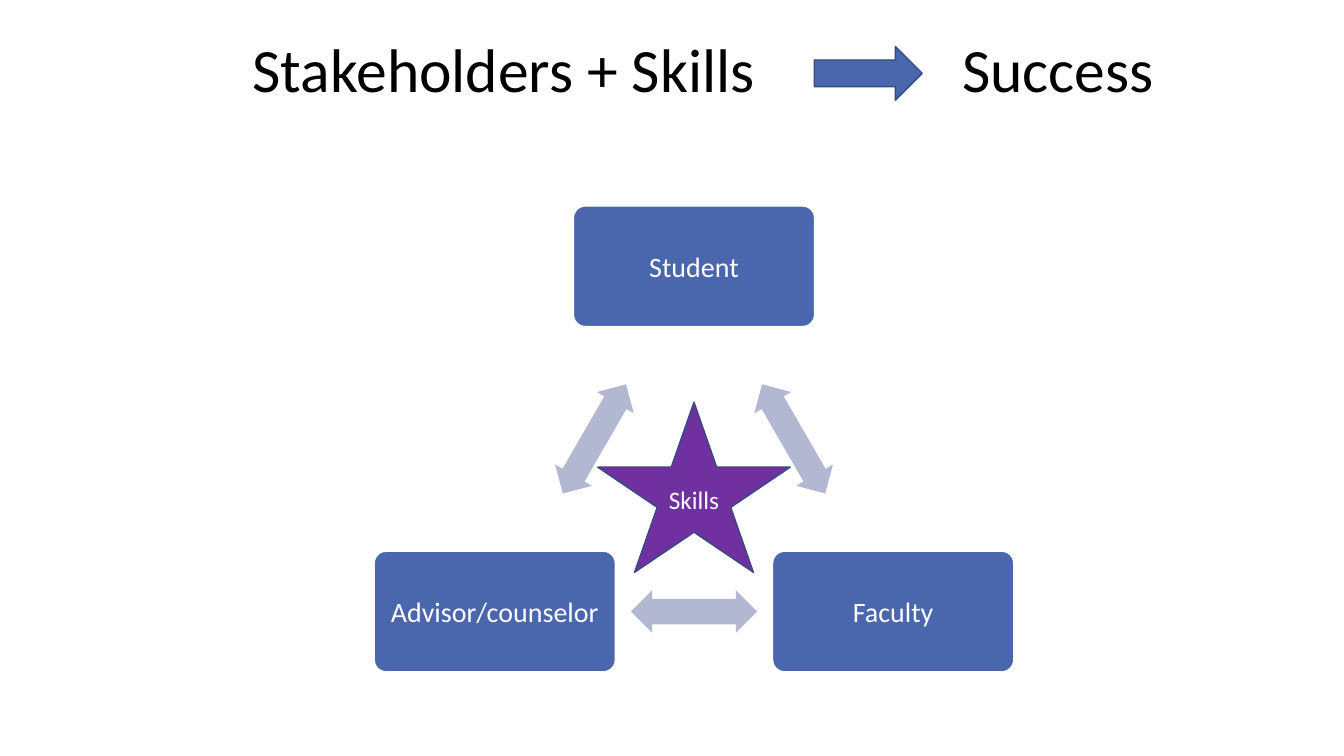
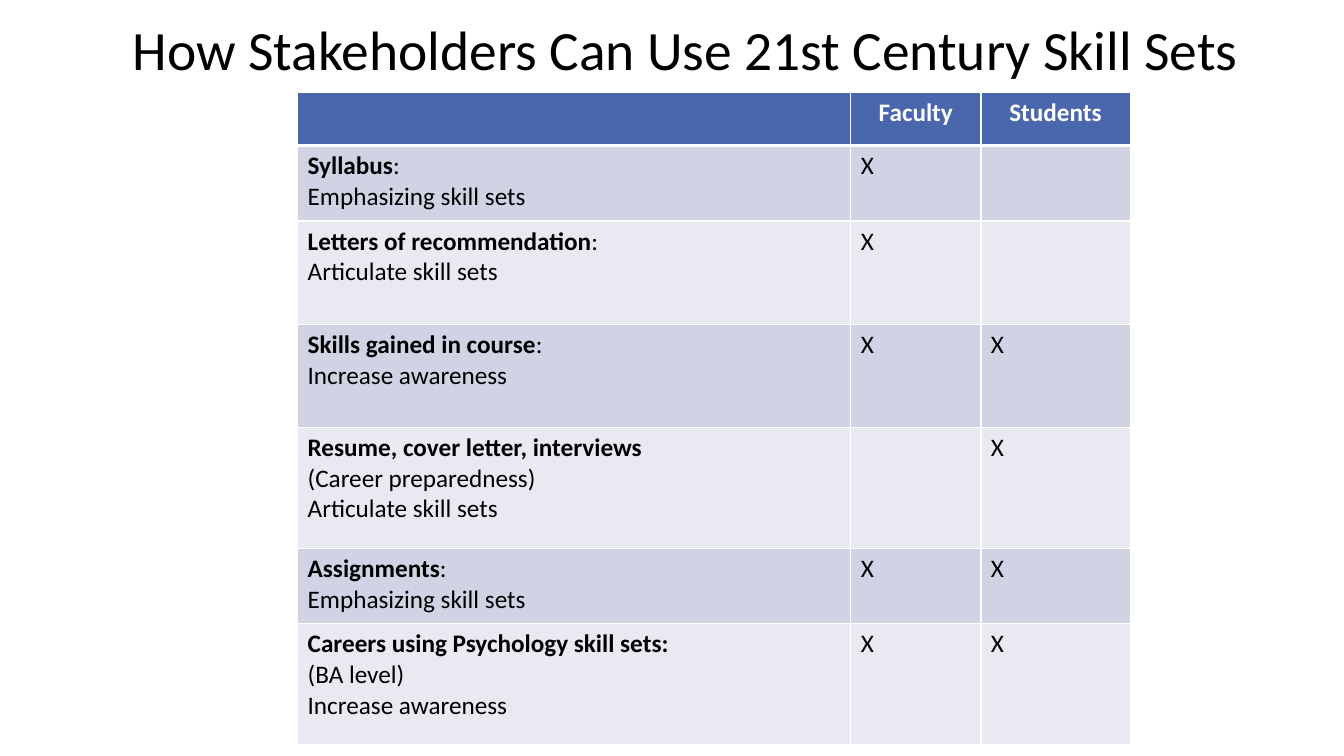
from itertools import combinations
from math import atan2, degrees

from lxml.etree import SubElement
from pptx import Presentation
from pptx.dml.color import RGBColor
from pptx.enum.shapes import MSO_SHAPE
from pptx.enum.text import MSO_ANCHOR, PP_ALIGN
from pptx.oxml.ns import qn
from pptx.util import Cm, Pt

COLORS = {
    "blue": "4A66AC",
    "outline": "374B7F",
    "arrow": "B2B8D2",
    "purple": "7030A0",
    "band_dark": "D0D3E3",
    "band_light": "E9EAF1",
    "white": "FFFFFF",
    "black": "000000",
}
FONT = "Calibri"


def color(name):
    return RGBColor.from_string(COLORS[name])


class SlideBuilder:
    def __init__(self, deck):
        self.deck = deck
        self.page = None

    def new_page(self):
        self.page = self.deck.slides.add_slide(self.deck.slide_layouts[6])

    def style(self, para, size, ink, align=PP_ALIGN.LEFT, bold=None):
        para.alignment = align
        para.font.name = FONT
        para.font.size = Pt(size)
        para.font.bold = bold
        para.font.color.rgb = color(ink)

    def title(self, text, left, top, width, height, size):
        box = self.page.shapes.add_textbox(Cm(left), Cm(top), Cm(width), Cm(height))
        frame = box.text_frame
        frame.word_wrap = True
        frame.vertical_anchor = MSO_ANCHOR.MIDDLE
        para = frame.paragraphs[0]
        para.text = text
        para.line_spacing = 0.9
        self.style(para, size, "black")

    def shape(self, kind, center, size, fill, line=None, adjustments=(), rotation=0):
        (x, y), (width, height) = center, size
        shape = self.page.shapes.add_shape(
            kind, Cm(x - width / 2), Cm(y - height / 2), Cm(width), Cm(height))
        shape.shadow.inherit = False
        shape.rotation = rotation
        for index, value in enumerate(adjustments):
            shape.adjustments[index] = value
        shape.fill.solid()
        shape.fill.fore_color.rgb = color(fill)
        if line:
            shape.line.color.rgb = color(line)
            shape.line.width = Pt(1)
        else:
            shape.line.fill.background()
        return shape

    def label(self, shape, text, size):
        frame = shape.text_frame
        frame.word_wrap = True
        frame.vertical_anchor = MSO_ANCHOR.MIDDLE
        para = frame.paragraphs[0]
        para.text = text
        self.style(para, size, "white", PP_ALIGN.CENTER)

    def table(self, left, top, widths, heights, header, rows):
        frame = self.page.shapes.add_table(
            len(heights), len(widths), Cm(left), Cm(top), Cm(sum(widths)), Cm(sum(heights)))
        table = frame.table
        for column, width in zip(table.columns, widths):
            column.width = Cm(width)
        for row, height in zip(table.rows, heights):
            row.height = Cm(height)
        for index, text in enumerate(header):
            cell = table.cell(0, index)
            self.dress(cell, "blue", bottom=3)
            para = cell.text_frame.paragraphs[0]
            para.text = text
            self.style(para, 18, "white", PP_ALIGN.CENTER, True)
        for number, (heading, ending, details, *marks) in enumerate(rows, 1):
            fill = "band_dark" if number % 2 else "band_light"
            for index in range(len(widths)):
                self.dress(table.cell(number, index), fill, top=3 if number == 1 else 1)
            frame = table.cell(number, 0).text_frame
            para = frame.paragraphs[0]
            for text, bold in ((heading, True), (ending, False)):
                if text:
                    span = para.add_run()
                    span.text = text
                    span.font.bold = bold
            self.style(para, 18, "black")
            for detail in details:
                para = frame.add_paragraph()
                para.text = detail
                self.style(para, 18, "black")
            for index, mark in enumerate(marks, 1):
                para = table.cell(number, index).text_frame.paragraphs[0]
                para.text = mark
                self.style(para, 18, "black")

    def dress(self, cell, fill, top=1, bottom=1):
        properties = cell._tc.get_or_add_tcPr()
        for side, width in (("L", 1), ("R", 1), ("T", top), ("B", bottom)):
            line = SubElement(properties, qn(f"a:ln{side}"), w=str(Pt(width)))
            solid = SubElement(line, qn("a:solidFill"))
            SubElement(solid, qn("a:srgbClr"), val=COLORS["white"])
        cell.fill.solid()
        cell.fill.fore_color.rgb = color(fill)


def build_success(builder):
    builder.new_page()
    builder.title("Stakeholders + Skills", 6.12, 0, 14, 3.68, 44)
    builder.title("Success", 24, 0, 6.5, 3.68, 44)
    builder.shape(MSO_SHAPE.RIGHT_ARROW, (21.88, 1.85), (2.72, 1.35), "blue", "outline")

    middle, spread = 17.49, 5.02
    stakeholders = {
        "Student": (middle, 6.71),
        "Faculty": (middle + spread, 15.41),
        "Advisor/counselor": (middle - spread, 15.41),
    }
    for name, center in stakeholders.items():
        card = builder.shape(
            MSO_SHAPE.ROUNDED_RECTANGLE, center, (6.08, 3.04), "blue", "white", [0.1])
        builder.label(card, name, 20)
    for (x1, y1), (x2, y2) in combinations(stakeholders.values(), 2):
        builder.shape(
            MSO_SHAPE.LEFT_RIGHT_ARROW, ((x1 + x2) / 2, (y1 + y2) / 2), (3.18, 1.07),
            "arrow", adjustments=[0.6, 0.5], rotation=round(degrees(atan2(y2 - y1, x2 - x1))))
    star = builder.shape(
        MSO_SHAPE.STAR_5_POINT, (middle, 12.28), (4.85, 4.29), "purple", "outline")
    builder.label(star, "Skills", 18)


def build_skill_uses(builder):
    builder.new_page()
    builder.title("How Stakeholders Can Use 21st Century Skill Sets", 3.1, 0.15, 30.3, 2.34, 39.6)
    rows = [
        ("Syllabus", ":", ["Emphasizing skill sets"], "X", ""),
        ("Letters of recommendation", ":", ["Articulate skill sets"], "X", ""),
        ("Skills gained in course", ":", ["Increase awareness"], "X", "X"),
        ("Resume, cover letter, interviews", "",
         ["(Career preparedness)", "Articulate skill sets"], "", "X"),
        ("Assignments", ":", ["Emphasizing skill sets"], "X", "X"),
        ("Careers using Psychology skill sets:", "",
         ["(BA level)", "Increase awareness"], "X", "X"),
    ]
    builder.table(
        7.5, 2.32, [13.94, 3.28, 3.76], [1.35, 1.9, 2.6, 2.6, 3.05, 1.9, 3.05],
        ["", "Faculty", "Students"], rows)


def main():
    deck = Presentation()
    deck.slide_width = Cm(33.87)
    deck.slide_height = Cm(19.05)
    builder = SlideBuilder(deck)
    build_success(builder)
    build_skill_uses(builder)
    deck.save("out.pptx")


if __name__ == "__main__":
    main()
